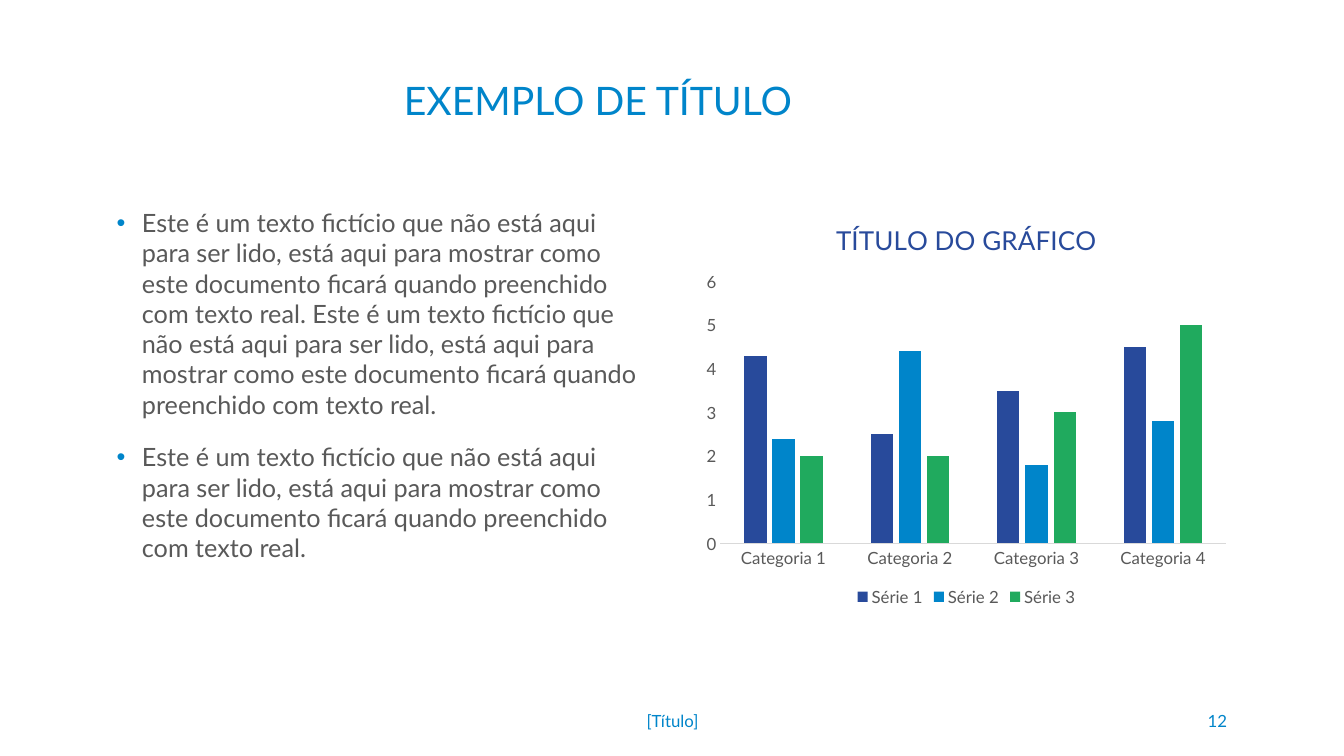
from lxml import etree
from pptx import Presentation
from pptx import util as u
from pptx.chart.data import CategoryChartData
from pptx.dml.color import RGBColor
from pptx.enum import chart as ch, text
from pptx.oxml.ns import qn

FONT = "Lato"
COLORS = {"navy": "284A9B", "blue": "0085CA", "green": "20AA5E",
          "gray": "595959", "rule": "D9D9D9"}
SLIDE_W, SLIDE_H = 13.33, 7.5
LEFT, CONTENT_TOP, CONTENT_H = 1.06, 2.01, 4.05
COLUMN_W, CHART_LEFT = 5.37, 6.9
FOOTER_TOP, FOOTER_H = 6.95, 0.4

SENTENCE = ("Este é um texto fictício que não está aqui para ser lido, está aqui para "
            "mostrar como este documento ficará quando preenchido com texto real.")
SERIES = [("Série 1", (4.3, 2.5, 3.5, 4.5), "navy"),
          ("Série 2", (2.4, 4.4, 1.8, 2.8), "blue"),
          ("Série 3", (2, 2, 3, 5), "green")]


def rgb(name):
    return RGBColor.from_string(COLORS[name])


def style(font, size, color):
    font.name = FONT
    font.size = u.Pt(size)
    font.bold = False
    font.color.rgb = rgb(color)


def add_frame(slide, box, anchor):
    frame = slide.shapes.add_textbox(*map(u.Inches, box)).text_frame
    frame.word_wrap = True
    frame.vertical_anchor = anchor
    return frame


def add_line(slide, box, wording, size, align, anchor=text.MSO_ANCHOR.MIDDLE):
    """Place one blue line of text in the box."""
    paragraph = add_frame(slide, box, anchor).paragraphs[0]
    paragraph.alignment = align
    run = paragraph.add_run()
    run.text = wording
    style(run.font, size, "blue")


def add_bullet(paragraph):
    props = paragraph._p.get_or_add_pPr()
    props.set("marL", str(u.Inches(0.25)))
    props.set("indent", str(-u.Inches(0.25)))
    color = etree.SubElement(props, qn("a:buClr"))
    etree.SubElement(color, qn("a:srgbClr")).set("val", COLORS["blue"])
    etree.SubElement(props, qn("a:buFont")).set("typeface", "Arial")
    etree.SubElement(props, qn("a:buChar")).set("char", "•")


def add_bullets(slide, box, items):
    frame = add_frame(slide, box, text.MSO_ANCHOR.TOP)
    for i, item in enumerate(items):
        paragraph = frame.add_paragraph() if i else frame.paragraphs[0]
        add_bullet(paragraph)
        paragraph.space_before = u.Pt(10 if i else 0)
        paragraph.space_after = u.Pt(6)
        run = paragraph.add_run()
        run.text = item
        style(run.font, 18, "gray")


def add_column_chart(slide, box):
    data = CategoryChartData()
    data.categories = [f"Categoria {n}" for n in range(1, 5)]
    for name, values, _ in SERIES:
        data.add_series(name, values)
    chart = slide.shapes.add_chart(
        ch.XL_CHART_TYPE.COLUMN_CLUSTERED, *map(u.Inches, box), data).chart
    style(chart.font, 12, "gray")

    chart.has_title = True
    heading = chart.chart_title.text_frame.paragraphs[0].add_run()
    heading.text = "TÍTULO DO GRÁFICO"
    style(heading.font, 18.6, "navy")
    chart.chart_title.include_in_layout = False

    chart.has_legend = True
    chart.legend.position = ch.XL_LEGEND_POSITION.BOTTOM
    chart.legend.include_in_layout = False
    style(chart.legend.font, 12, "gray")

    for axis in (chart.category_axis, chart.value_axis):
        axis.has_major_gridlines = False
        axis.major_tick_mark = axis.minor_tick_mark = ch.XL_TICK_MARK.NONE
        style(axis.tick_labels.font, 12, "gray")
    baseline = chart.category_axis.format.line
    baseline.color.rgb = rgb("rule")
    baseline.width = u.Pt(0.75)
    values = chart.value_axis
    values.format.line.fill.background()
    values.minimum_scale, values.maximum_scale, values.major_unit = 0, 6, 1

    plot = chart.plots[0]
    plot.vary_by_categories = False
    plot.gap_width, plot.overlap = 219, -27
    for series, (_, _, color) in zip(plot.series, SERIES):
        series.format.fill.solid()
        series.format.fill.fore_color.rgb = rgb(color)


def add_footer(slide, title, number):
    add_line(slide, (2.16, FOOTER_TOP, 9.02, FOOTER_H), title, 12, text.PP_ALIGN.CENTER)
    add_line(slide, (11.71, FOOTER_TOP, 0.56, FOOTER_H), number, 12, text.PP_ALIGN.RIGHT)


def main():
    deck = Presentation()
    deck.slide_width, deck.slide_height = u.Inches(SLIDE_W), u.Inches(SLIDE_H)
    slide = deck.slides.add_slide(deck.slide_layouts[6])
    add_line(slide, (LEFT, 0.71, 9.74, 0.51), "EXEMPLO DE TÍTULO", 28,
             text.PP_ALIGN.CENTER, text.MSO_ANCHOR.TOP)
    add_bullets(slide, (LEFT, CONTENT_TOP, COLUMN_W, CONTENT_H),
                [f"{SENTENCE} {SENTENCE}", SENTENCE])
    add_column_chart(slide, (CHART_LEFT, CONTENT_TOP, COLUMN_W, CONTENT_H))
    add_footer(slide, "[Título]", "12")
    deck.save("out.pptx")


if __name__ == "__main__":
    main()
